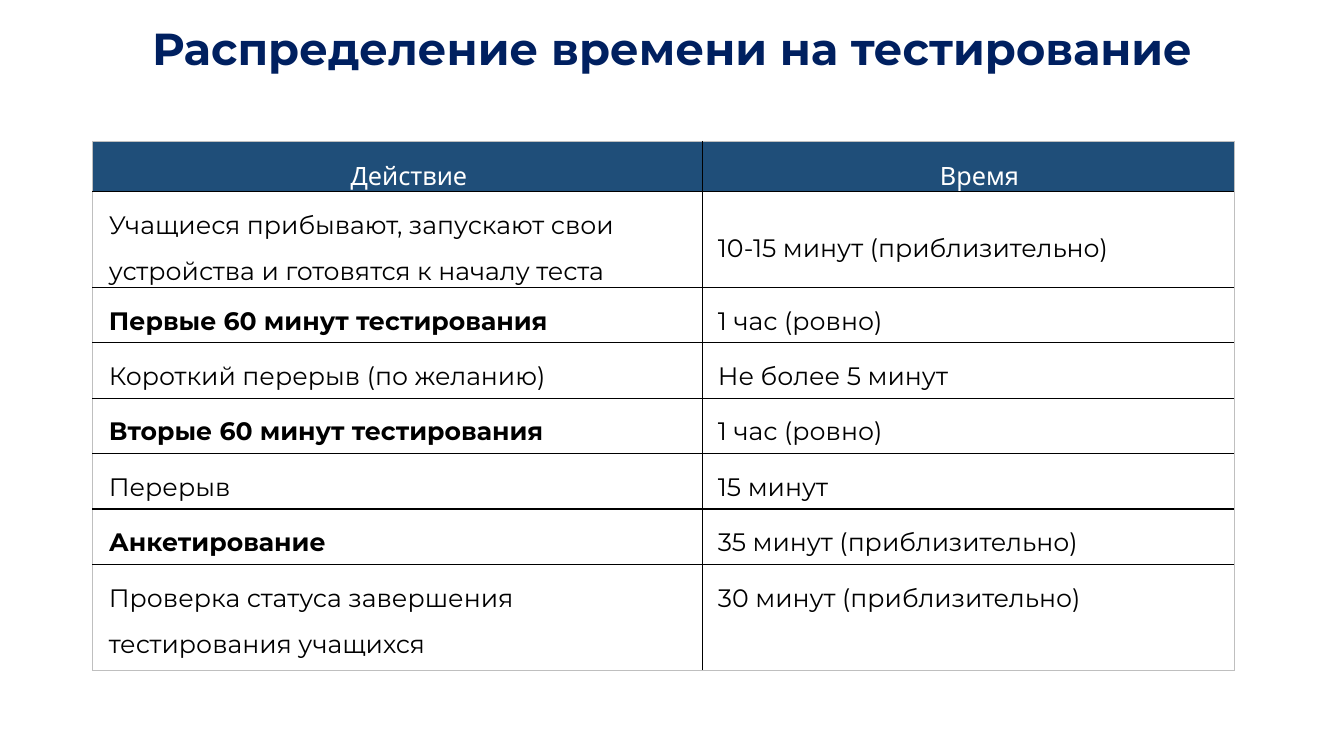
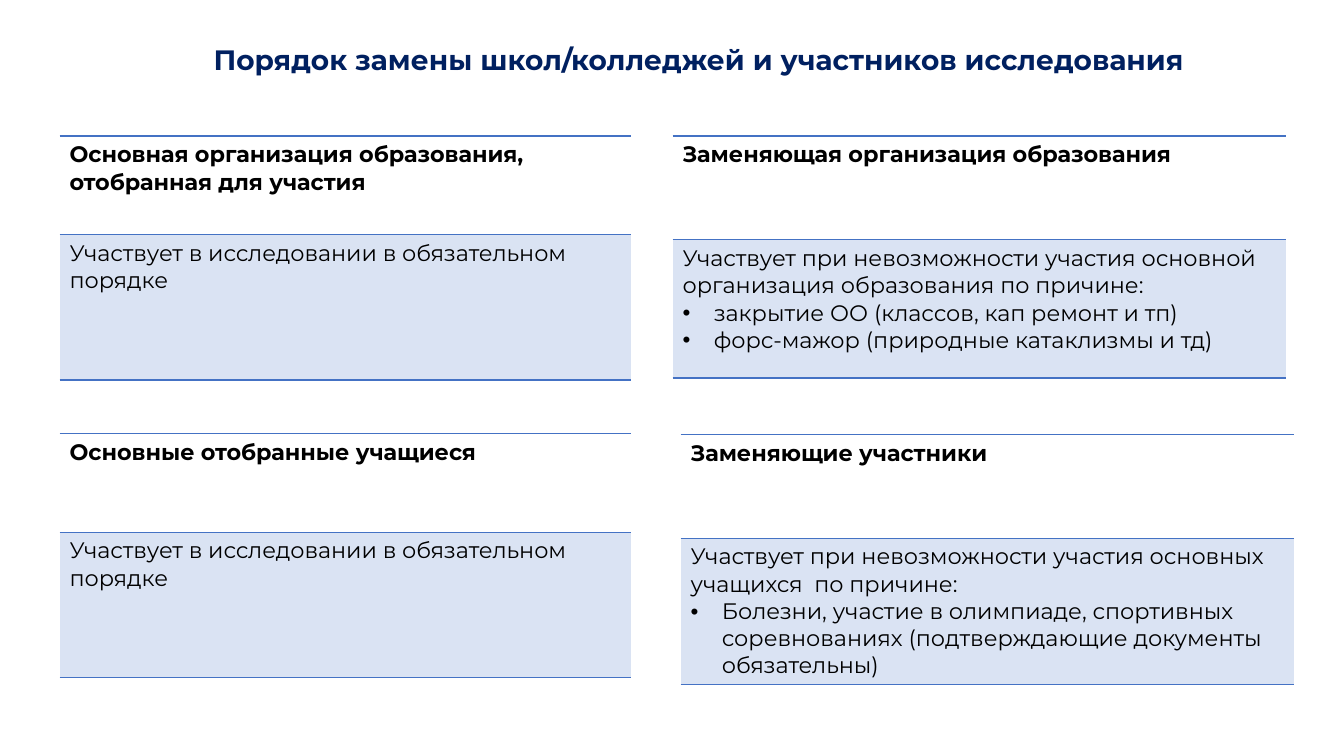
from lxml.etree import SubElement
from pptx import Presentation
from pptx.dml.color import RGBColor
from pptx.enum.text import MSO_ANCHOR, MSO_AUTO_SIZE, PP_ALIGN
from pptx.oxml.ns import qn
from pptx.util import Inches, Pt

COLORS = {"navy": "002060", "header": "1F4E79", "line": "4472C4", "tint": "DAE3F3",
          "edge": "BFBFBF", "black": "000000", "white": "FFFFFF"}
FONT = "Montserrat"
HEADER_FONT = "Quicksand"


def rgb(name):
    return RGBColor.from_string(COLORS[name])


class Deck:
    """Holds the style and the current slide."""

    def __init__(self):
        self.prs = Presentation()
        self.prs.slide_width, self.prs.slide_height = Inches(13.33), Inches(7.5)
        self.s = None

    def slide(self, title, box, size, line_spacing=1.0):
        self.s = self.prs.slides.add_slide(self.prs.slide_layouts[5])
        sp = self.s.shapes.title
        sp.left, sp.top, sp.width, sp.height = map(Inches, box)
        tf = sp.text_frame
        tf.text = title
        tf.word_wrap, tf.auto_size = True, MSO_AUTO_SIZE.NONE
        tf.vertical_anchor = MSO_ANCHOR.MIDDLE
        p = tf.paragraphs[0]
        p.alignment, p.line_spacing = PP_ALIGN.CENTER, line_spacing
        self.format(p, size, "navy", bold=True)

    def format(self, p, size, color="black", bold=False, font=FONT):
        for r in p.runs:
            r.font.size, r.font.bold, r.font.name = Pt(size), bold, font
            r.font.color.rgb = rgb(color)

    def indent(self, p, left, first=0, bullet=None):
        pPr = p._p.get_or_add_pPr()
        pPr.set("marL", str(Inches(left)))
        pPr.set("indent", str(Inches(first)))
        if bullet:
            SubElement(pPr, qn("a:buFont")).set("typeface", "Arial")
            SubElement(pPr, qn("a:buChar")).set("char", bullet)

    def table(self, left, top, cols, rows):
        frame = self.s.shapes.add_table(len(rows), len(cols), Inches(left), Inches(top),
                                        Inches(sum(cols)), Inches(sum(rows)))
        table = frame.table
        table.first_row = table.horz_banding = False
        for column, width in zip(table.columns, cols):
            column.width = Inches(width)
        for row, height in zip(table.rows, rows):
            row.height = Inches(height)
        return table

    def cell(self, cell, fill, borders):
        """Borders come as colour names or None, in the order left, right, top, bottom."""
        tcPr = cell._tc.get_or_add_tcPr()
        for side, color in zip("LRTB", borders):
            ln = SubElement(tcPr, qn(f"a:ln{side}"))
            ln.set("w", str(Pt(0.5 if color == "edge" else 1)))
            if color:
                solid = SubElement(ln, qn("a:solidFill"))
                SubElement(solid, qn("a:srgbClr")).set("val", COLORS[color])
            else:
                SubElement(ln, qn("a:noFill"))
        if fill:
            cell.fill.solid()
            cell.fill.fore_color.rgb = rgb(fill)
        else:
            cell.fill.background()

    def schedule(self, left, top, cols, heights, rows):
        table = self.table(left, top, cols, heights)
        last = len(rows) - 1
        for i, (texts, bold) in enumerate(rows):
            for j, text in enumerate(texts):
                cell, header = table.cell(i, j), i == 0
                self.cell(cell, "header" if header else None,
                          ("black" if j else "edge", "edge" if j else "black",
                           "edge" if header else "black",
                           "edge" if i == last else "black"))
                cell.margin_left, cell.margin_right = Inches(0.15), Inches(0.12)
                cell.margin_top, cell.margin_bottom = Inches(0.03), 0
                cell.text_frame.text = text
                p = cell.text_frame.paragraphs[0]
                p.line_spacing, p.space_before, p.space_after = 1.5, Pt(9), Pt(9)
                if header:
                    p.alignment = PP_ALIGN.CENTER
                    self.indent(p, 0.19)
                    self.format(p, 18, "white", font=HEADER_FONT)
                else:
                    self.indent(p, 0 if j else 0.01)
                    self.format(p, 18, bold=bold and j == 0)
        table.cell(1, 1).vertical_anchor = MSO_ANCHOR.MIDDLE

    def card(self, left, top, width, heights, heading, text, reasons=()):
        table = self.table(left, top, [width], heights)
        head, body = table.cell(0, 0), table.cell(1, 0)
        for cell, fill in ((head, None), (body, "tint")):
            self.cell(cell, fill, (None, None, "line", "line"))
        head.text_frame.text = heading
        self.format(head.text_frame.paragraphs[0], 16, bold=True)
        tf = body.text_frame
        tf.text = text
        for reason in reasons:
            p = tf.add_paragraph()
            p.text = reason
            self.indent(p, 0.31, -0.31, "•")
        for p in tf.paragraphs:
            self.format(p, 16)


def main():
    deck = Deck()

    # Testing schedule
    deck.slide("Распределение времени на тестирование", (0.92, 0.13, 11.5, 0.75), 32, 0.9)
    deck.schedule(0.92, 1.4, [6.05, 5.27], [0.5, 0.95] + [0.55] * 5 + [1.05], [
        (("Действие", "Время"), False),
        (("Учащиеся прибывают, запускают свои устройства и готовятся к началу теста",
          "10-15 минут (приблизительно)"), False),
        (("Первые 60 минут тестирования", "1 час (ровно)"), True),
        (("Короткий перерыв (по желанию)", "Не более 5 минут"), False),
        (("Вторые 60 минут тестирования", "1 час (ровно)"), True),
        (("Перерыв", "15 минут"), False),
        (("Анкетирование", "35 минут (приблизительно)"), True),
        (("Проверка статуса завершения тестирования учащихся",
          "30 минут (приблизительно)"), False),
    ])

    # Replacement rules: selected on the left, replacing on the right
    deck.slide("Порядок замены школ/колледжей и участников исследования",
               (1.91, 0.37, 10.04, 0.44), 20)
    required = "Участвует в исследовании в обязательном порядке"
    for top, heading in ((1.35, "Основная организация образования, отобранная для участия"),
                         (4.3, "Основные отобранные учащиеся")):
        deck.card(0.59, top, 5.67, [0.98, 1.44], heading, required)
    deck.card(6.67, 1.35, 6.08, [1.03, 1.37], "Заменяющая организация образования",
              "Участвует при невозможности участия основной организация образования по причине:",
              ["закрытие ОО (классов, кап ремонт и тп)",
               "форс-мажор (природные катаклизмы и тд)"])
    deck.card(6.75, 4.31, 6.08, [1.03, 1.43], "Заменяющие участники",
              "Участвует при невозможности участия основных учащихся  по причине:",
              ["Болезни, участие в олимпиаде, спортивных соревнованиях "
               "(подтверждающие документы обязательны)"])

    deck.prs.save("out.pptx")


if __name__ == "__main__":
    main()
